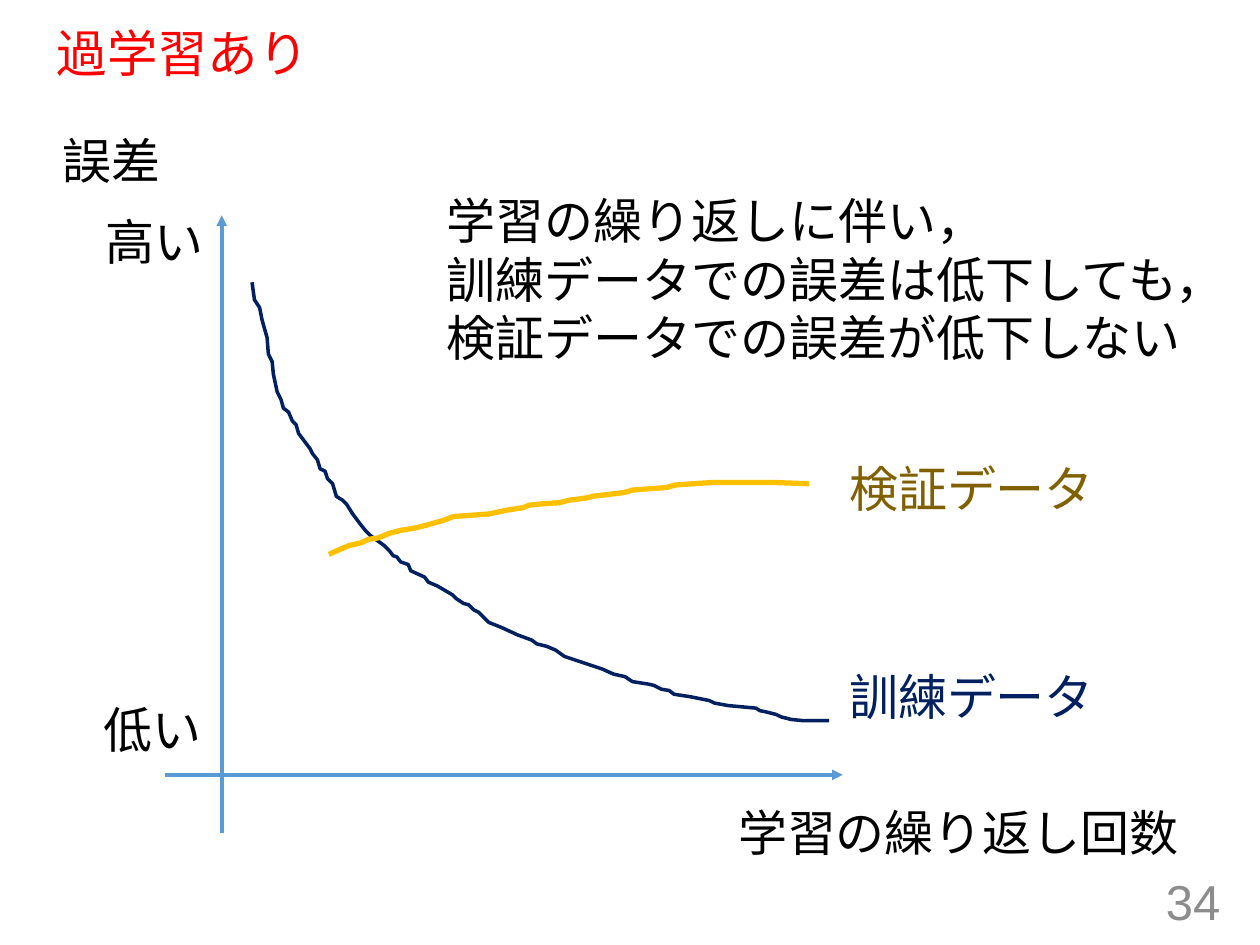
from dataclasses import dataclass

from pptx import Presentation
from pptx.dml.color import RGBColor
from pptx.enum.shapes import MSO_CONNECTOR as Connector
from pptx.enum.text import MSO_ANCHOR as Anchor, MSO_AUTO_SIZE as AutoSize, PP_ALIGN as Align
from pptx.oxml.ns import qn
from pptx.util import Cm, Pt
from lxml.etree import SubElement

COLORS = {
    "title": "FF0000",
    "text": "000000",
    "number": "8C8C8C",
    "axis": "5B9BD5",
    "training": "002060",
    "validation": "806000",
    "validation_line": "FFC000",
}
CURVE_UNIT = Cm(2.54) / 100  # curve points are in hundredths of an inch


@dataclass
class Label:
    lines: list[str]
    left: float
    top: float
    width: float
    height: float = 1.45
    color: str = "text"
    font: str = "Calibri"
    align: Align = Align.LEFT
    anchor: Anchor = Anchor.TOP
    wrap: bool = False


@dataclass
class Axis:
    start: tuple[float, float]
    end: tuple[float, float]


@dataclass
class Curve:
    points: list[tuple[int, int]]
    color: str
    weight: float


LABELS = [
    Label(["訓練データ"], 16.87, 13.31, 5.51, color="training"),
    Label(["検証データ"], 16.87, 9.12, 5.51, color="validation"),
    Label(["学習の繰り返しに伴い，", "訓練データでの誤差は低下しても，",
           "検証データでの誤差が低下しない"], 8.76, 3.71, 16.46, 3.84),
    Label(["学習の繰り返し回数"], 14.63, 16.05, 9.5),
    Label(["誤差"], 1.02, 2.51, 2.51),
    Label(["高い"], 1.88, 4.14, 2.51),
    Label(["低い"], 1.83, 13.97, 2.51),
    Label(["34"], 19.13, 17.65, 5.72, 1.02, "number", "Arial",
          Align.RIGHT, Anchor.MIDDLE, True),
]
AXES = [
    Axis((4.47, 16.79), (4.47, 4.34)),
    Axis((3.33, 15.62), (16.99, 15.62)),
]
CURVES = [
    Curve([(200, 224), (202, 238), (206, 244), (208, 254), (212, 268),
           (213, 281), (216, 287), (217, 297), (220, 311), (223, 317),
           (225, 324), (229, 327), (232, 334), (235, 337), (237, 344),
           (246, 356), (248, 360), (252, 365), (254, 372), (258, 374),
           (260, 380), (264, 384), (267, 394), (272, 397), (275, 400),
           (280, 408), (286, 416), (290, 421), (294, 425), (298, 428),
           (305, 433), (309, 437), (312, 441), (315, 442), (318, 446),
           (324, 448), (326, 453), (337, 458), (340, 462), (347, 465),
           (359, 472), (362, 475), (368, 479), (372, 480), (376, 484),
           (380, 486), (383, 489), (388, 494), (398, 498), (411, 504),
           (422, 508), (426, 511), (434, 513), (441, 516), (448, 521),
           (463, 526), (478, 531), (487, 535), (496, 537), (502, 541),
           (515, 543), (519, 544), (525, 547), (531, 548), (535, 551),
           (548, 553), (563, 556), (567, 558), (578, 560), (600, 562),
           (603, 564), (608, 565), (616, 567), (620, 569), (628, 571),
           (638, 572), (658, 572)], "training", 2),
    Curve([(261, 440), (270, 436), (277, 433), (286, 431), (293, 428),
           (300, 427), (310, 423), (318, 421), (330, 419), (338, 417),
           (352, 413), (360, 410), (388, 408), (402, 405), (415, 403),
           (420, 401), (430, 400), (444, 399), (452, 397), (460, 396),
           (467, 395), (470, 394), (495, 391), (502, 389), (515, 388),
           (529, 387), (536, 385), (550, 384), (565, 383), (590, 383),
           (615, 383), (642, 384)], "validation_line", 3),
]


def rgb(name: str) -> RGBColor:
    return RGBColor.from_string(COLORS[name])


def add_span(para, text: str, size: float, font: str, color: str) -> None:
    span = para.add_run()
    span.text = text
    span.font.size = Pt(size)
    span.font.name = font
    span.font.color.rgb = rgb(color)


def set_title(page, text: str) -> None:
    title = page.shapes.title
    title.left, title.top = Cm(0.89), Cm(0.48)
    title.width, title.height = Cm(23.5), Cm(1.3)
    frame = title.text_frame
    frame.auto_size = AutoSize.NONE
    frame.vertical_anchor = Anchor.MIDDLE
    para = frame.paragraphs[0]
    para.alignment = Align.LEFT
    para.line_spacing = 0.9
    add_span(para, text, 28.8, "Arial", "title")


def add_label(page, label: Label) -> None:
    box = page.shapes.add_textbox(Cm(label.left), Cm(label.top),
                                  Cm(label.width), Cm(label.height))
    frame = box.text_frame
    frame.word_wrap = label.wrap
    frame.auto_size = AutoSize.NONE if label.wrap else AutoSize.SHAPE_TO_FIT_TEXT
    frame.vertical_anchor = label.anchor
    for index, line in enumerate(label.lines):
        para = frame.add_paragraph() if index else frame.paragraphs[0]
        para.alignment = label.align
        add_span(para, line, 28, label.font, label.color)


def add_axis(page, axis: Axis) -> None:
    arrow = page.shapes.add_connector(
        Connector.STRAIGHT, *map(Cm, axis.start), *map(Cm, axis.end))
    arrow.line.color.rgb = rgb("axis")
    arrow.line.width = Pt(2)
    properties = arrow.line._get_or_add_ln()
    SubElement(properties, qn("a:tailEnd"), type="triangle")
    SubElement(arrow._element.spPr, qn("a:effectLst"))


def add_curve(page, curve: Curve) -> None:
    builder = page.shapes.build_freeform(*curve.points[0], scale=CURVE_UNIT)
    builder.add_line_segments(curve.points[1:], close=False)
    shape = builder.convert_to_shape()
    shape.shadow.inherit = False
    shape.fill.background()
    shape.line.color.rgb = rgb(curve.color)
    shape.line.width = Pt(curve.weight)


def main() -> None:
    deck = Presentation()
    deck.slide_width, deck.slide_height = Cm(25.4), Cm(19.05)
    page = deck.slides.add_slide(deck.slide_layouts.get_by_name("Title Only"))
    set_title(page, "過学習あり")
    for axis in AXES:
        add_axis(page, axis)
    for curve in CURVES:
        add_curve(page, curve)
    for label in LABELS:
        add_label(page, label)
    deck.save("out.pptx")


if __name__ == "__main__":
    main()
